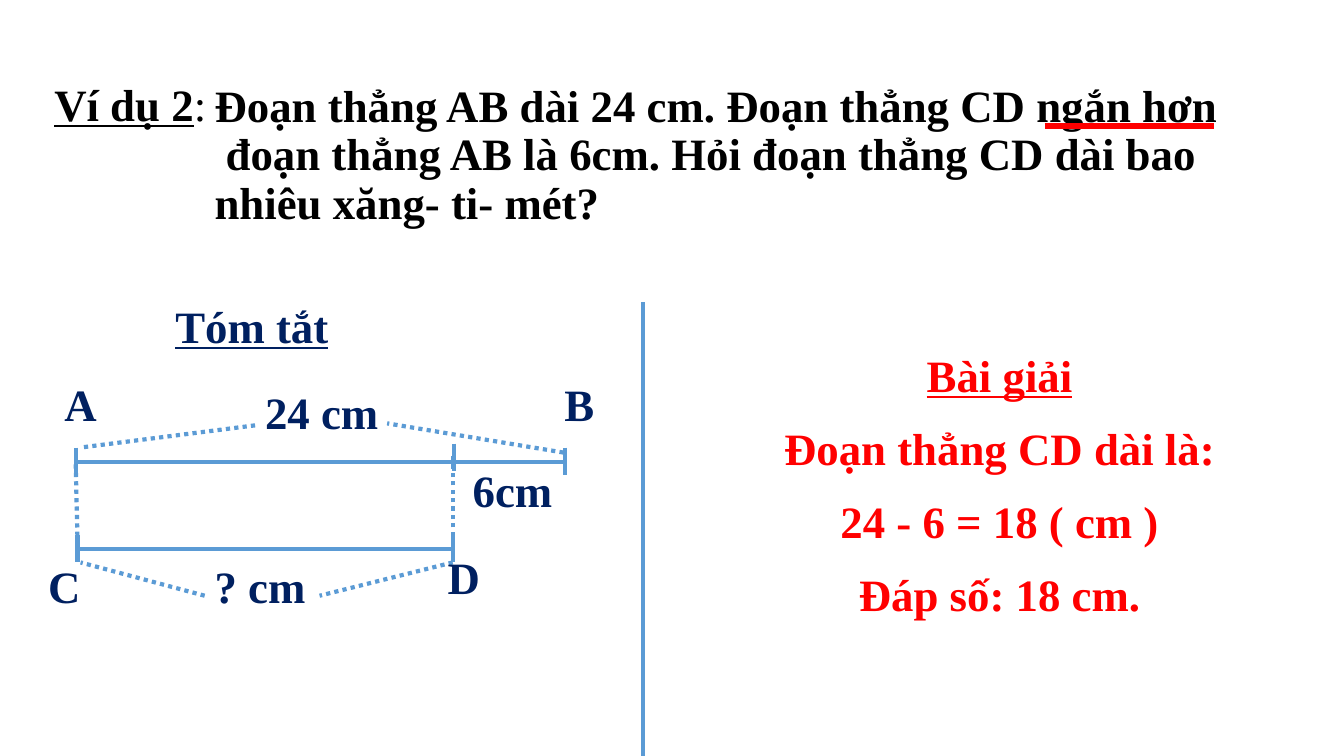
import pptx
import pptx.dml.color
import pptx.enum.dml
import pptx.enum.shapes
import pptx.enum.text
import pptx.util
from pptx.oxml.ns import qn

PX = 9144  # one hundredth of an inch in EMU
FONT = "Times New Roman"
BLACK, NAVY, RED, BLUE = "000000", "002060", "FF0000", "5B9BD5"


def px(length):
    return pptx.util.Emu(length * PX)


def color(hex_string):
    return pptx.dml.color.RGBColor.from_string(hex_string)


def add_text(slide, box, lines, font_color, line_spacing=1.0, space_before=0,
             centered=False):
    """Add a wrapped text box and return its paragraphs."""
    frame = slide.shapes.add_textbox(*map(px, box)).text_frame
    frame.word_wrap = True
    for index, line in enumerate(lines):
        paragraph = frame.add_paragraph() if index else frame.paragraphs[0]
        paragraph.text = line
        paragraph.line_spacing = line_spacing
        if index and space_before:
            paragraph.space_before = pptx.util.Pt(space_before)
        if centered:
            paragraph.alignment = pptx.enum.text.PP_ALIGN.CENTER
        paragraph.font.name = FONT
        paragraph.font.size = pptx.util.Pt(32)
        paragraph.font.bold = True
        paragraph.font.color.rgb = color(font_color)
    return frame.paragraphs


def add_line(slide, start, end, line_color=BLUE, width=3, dotted=False):
    connector = slide.shapes.add_connector(
        pptx.enum.shapes.MSO_CONNECTOR.STRAIGHT, *map(px, (*start, *end)))
    connector.line.color.rgb = color(line_color)
    connector.line.width = pptx.util.Pt(width)
    if dotted:
        # ROUND_DOT is the sysDot preset
        connector.line.dash_style = pptx.enum.dml.MSO_LINE.ROUND_DOT
    properties = connector._element.spPr
    properties.append(properties.makeelement(qn("a:effectLst"), {}))


def add_problem(slide, left, top, width, height):
    """Example label, problem statement and red underline."""
    label_width = 159
    statement = add_text(
        slide, (left + label_width, top + 1, width - label_width, height),
        ["Đoạn thẳng AB dài 24 cm. Đoạn thẳng CD ngắn hơn",
         "đoạn thẳng AB là 6cm. Hỏi đoạn thẳng CD dài bao "
         "nhiêu xăng- ti- mét?"],
        BLACK, line_spacing=0.9)
    # First-line indent of the second line
    statement[1]._p.get_or_add_pPr().set("indent", str(px(11)))
    add_line(slide, (left + 992, top + 48), (left + 1160, top + 48), RED, 4.5)

    label = add_text(slide, (left, top, 220, 79), ["Ví dụ 2"], BLACK, 0.9)[0]
    label.runs[0].font.underline = True
    colon = label.add_run()
    colon.text = ":"
    colon.font.bold = False
    colon.font.underline = False
    for run in label.runs:
        run.font.name = FONT
        run.font.size = pptx.util.Pt(32)


def add_summary(slide, left, top):
    """Heading and segment diagram, with A at the box's left edge."""
    heading = add_text(slide, (left + 89, top, 220, 79), ["Tóm tắt"], NAVY, 0.9)
    heading[0].font.underline = True

    ab_y, cd_y = 161, 248  # heights of the two segments
    b_x, d_x = 484, 374

    # Segments and their end ticks
    solid = [((0, ab_y), (b_x, ab_y)), ((0, cd_y), (d_x, cd_y))]
    for x, y in ((0, ab_y), (b_x + 1, ab_y), (d_x + 1, ab_y - 4),
                 (2, cd_y), (d_x, cd_y)):
        solid.append(((x, y - 14), (x, y + 13)))

    # Dotted guides and measuring lines
    dotted = [
        ((2, cd_y - 5), (0, ab_y)),
        ((d_x, cd_y - 5), (d_x, ab_y - 9)),
        ((178, ab_y - 36), (5, ab_y - 14)),
        ((b_x, ab_y - 9), (309, ab_y - 38)),
        ((128, cd_y + 46), (5, cd_y + 13)),
        ((d_x, cd_y + 13), (242, cd_y + 46)),
    ]
    for lines, is_dotted in ((solid, False), (dotted, True)):
        for start, end in lines:
            add_line(slide, (left + start[0], top + start[1]),
                     (left + end[0], top + end[1]), dotted=is_dotted)

    # Point names and lengths
    labels = [("A", -21, 72, 32), ("B", 475, 72, 32), ("C", -37, 252, 32),
              ("D", 359, 243, 51), ("24 cm", 178, 80, 181),
              ("6cm", 384, 157, 142), ("? cm", 128, 252, 181)]
    for text, x, y, width in labels:
        add_text(slide, (left + x, top + y, width, 64), [text], NAVY)


def add_solution(slide, left, top, width, height):
    """Vertical divider and worked solution."""
    add_line(slide, (left, top), (left, top + height))
    paragraphs = add_text(
        slide, (left, top + 46, width, 396),
        ["Bài giải", "Đoạn thẳng CD dài là:", "24 - 6 = 18 ( cm )",
         "Đáp số: 18 cm."],
        RED, line_spacing=0.9, space_before=17.6, centered=True)
    paragraphs[0].font.underline = True


def main():
    presentation = pptx.Presentation()
    presentation.slide_width = px(1333)
    presentation.slide_height = px(750)
    slide = presentation.slides.add_slide(presentation.slide_layouts[6])
    add_problem(slide, 44, 77, 1253, 198)
    add_summary(slide, 75, 297)
    add_solution(slide, 638, 300, 707, 450)
    presentation.save("out.pptx")


if __name__ == "__main__":
    main()
